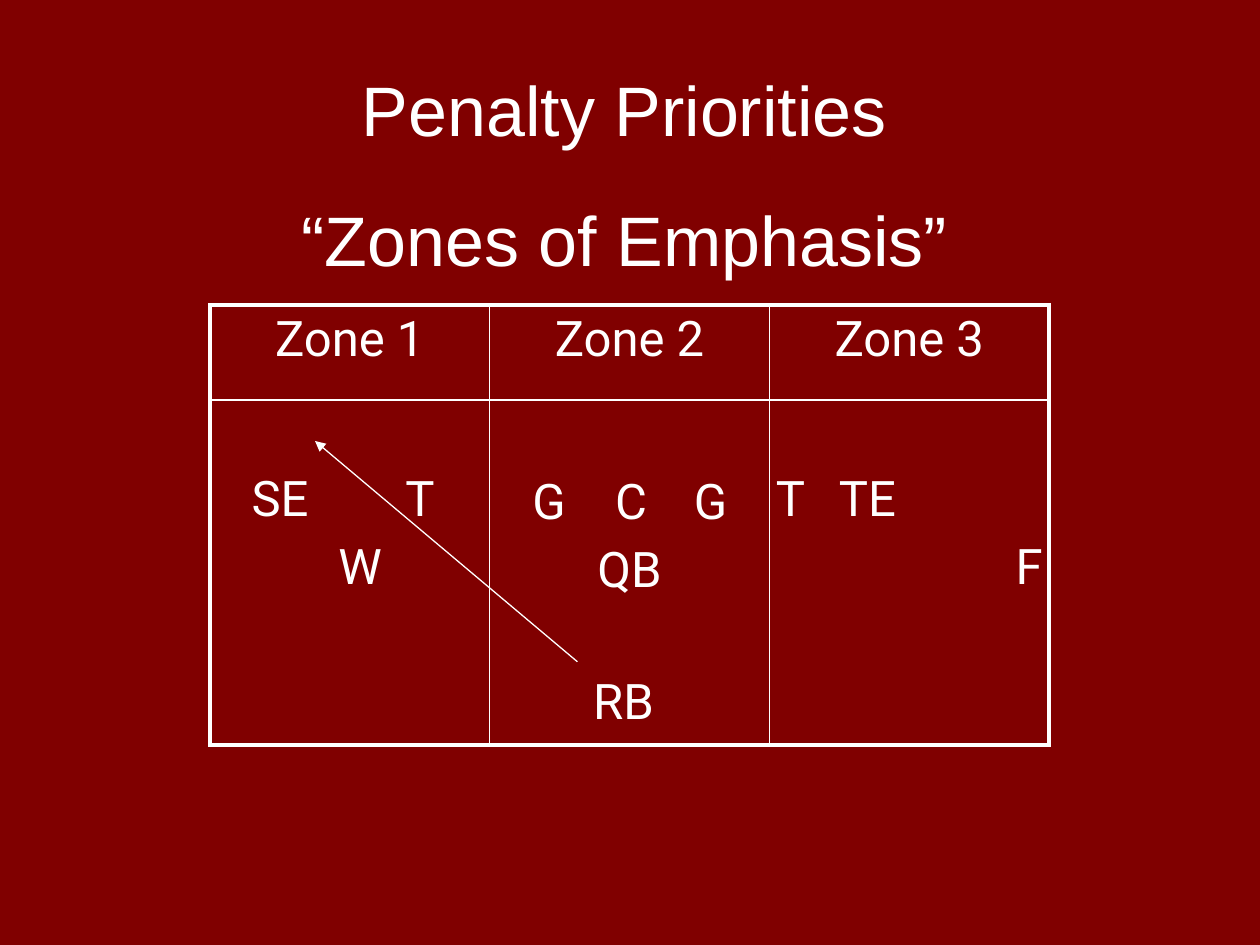
from lxml.etree import SubElement
from pptx import Presentation
from pptx.dml.color import RGBColor
from pptx.enum.shapes import MSO_CONNECTOR
from pptx.enum.text import PP_ALIGN
from pptx.oxml.ns import qn
from pptx.util import Cm, Pt

THEME = {
    "bg": RGBColor(0x80, 0, 0),
    "ink": RGBColor(0xFF, 0xFF, 0xFF),
    "title": {"name": "Arial", "size": Pt(40)},
    "body": {"name": "Roboto", "size": Pt(28)},
    "outer": 2.25,
    "inner": 1,
    "arrow": 0.75,
}
LEFT, CENTER, RIGHT = PP_ALIGN.LEFT, PP_ALIGN.CENTER, PP_ALIGN.RIGHT
INSET = 0.13

TITLE = [("Penalty Priorities", CENTER, 0, ()), ("“Zones of Emphasis”", CENTER, 26, ())]
ZONES = ["Zone 1", "Zone 2", "Zone 3"]
FORMATIONS = [
    (1.44, [("\tSE\tT", LEFT, 0, (0.71, 3.81)), ("\tW", LEFT, 6, (2.46,))]),
    (1.5, [("\tG\tC\tG", LEFT, 0, (0.73, 2.4, 3.99)),
           ("QB", CENTER, 6, ()), ("RB ", CENTER, 42.5, ())]),
    (1.44, [("T\tTE", LEFT, 0, (1.27,)), ("F", RIGHT, 6, ())]),
]
ROWS = [[(INSET, [(zone, CENTER, 0, ())]) for zone in ZONES], FORMATIONS]
ROW_HEIGHTS = [1.91, 6.96]
COL_WIDTH = 5.64
TABLE_LEFT, TABLE_TOP = 4.23, 6.15
RUN_START, RUN_END = (11.64, 13.34), (6.35, 8.89)


def write(tf, paragraphs, font):
    for i, (text, align, before, tabs) in enumerate(paragraphs):
        p = tf.paragraphs[0] if i == 0 else tf.add_paragraph()
        p.alignment = align
        if before:
            p.space_before = Pt(before)
        if tabs:
            tab_list = SubElement(p._p.get_or_add_pPr(), qn("a:tabLst"))
            for pos in tabs:
                SubElement(tab_list, qn("a:tab"), pos=str(Cm(pos)), algn="l")
        r = p.add_run()
        r.text = text
        for key, value in font.items():
            setattr(r.font, key, value)
        r.font.color.rgb = THEME["ink"]


def set_margins(target, top):
    margins = {"left": INSET, "right": INSET, "top": top, "bottom": INSET}
    for side, value in margins.items():
        setattr(target, f"margin_{side}", Cm(value))


def set_borders(cell, edges):
    tcPr = cell._tc.get_or_add_tcPr()
    for tag, is_outer in edges.items():
        width = THEME["outer" if is_outer else "inner"]
        ln = SubElement(tcPr, qn(f"a:{tag}"), w=str(Pt(width)))
        fill = SubElement(ln, qn("a:solidFill"))
        SubElement(fill, qn("a:srgbClr"), val=str(THEME["ink"]))


def add_title(s):
    tf = s.shapes.add_textbox(Cm(1.47), Cm(1.07), Cm(22.23), Cm(4.24)).text_frame
    tf.word_wrap = True
    set_margins(tf, 0.28)
    write(tf, TITLE, THEME["title"])


def add_zones(s):
    n_rows, n_cols = len(ROWS), len(ZONES)
    table = s.shapes.add_table(
        n_rows, n_cols, Cm(TABLE_LEFT), Cm(TABLE_TOP),
        Cm(COL_WIDTH * n_cols), Cm(sum(ROW_HEIGHTS))).table
    table.first_row = table.horz_banding = False
    for col in table.columns:
        col.width = Cm(COL_WIDTH)
    for i, row in enumerate(ROWS):
        table.rows[i].height = Cm(ROW_HEIGHTS[i])
        for j, (top, paragraphs) in enumerate(row):
            cell = table.cell(i, j)
            set_margins(cell, top)
            set_borders(cell, {"lnL": j == 0, "lnR": j == n_cols - 1,
                               "lnT": i == 0, "lnB": i == n_rows - 1})
            cell.fill.background()
            write(cell.text_frame, paragraphs, THEME["body"])


def add_run_arrow(s):
    ends = [Cm(v) for v in RUN_START + RUN_END]
    arrow = s.shapes.add_connector(MSO_CONNECTOR.STRAIGHT, *ends)
    arrow.line.color.rgb = THEME["ink"]
    arrow.line.width = Pt(THEME["arrow"])
    SubElement(arrow.line._get_or_add_ln(), qn("a:tailEnd"), type="triangle")
    SubElement(arrow._element.spPr, qn("a:effectLst"))


def main():
    prs = Presentation()
    prs.slide_width, prs.slide_height = Cm(25.4), Cm(19.05)
    s = prs.slides.add_slide(prs.slide_layouts[6])
    s.background.fill.solid()
    s.background.fill.fore_color.rgb = THEME["bg"]
    add_title(s)
    add_zones(s)
    add_run_arrow(s)
    prs.save("out.pptx")


if __name__ == "__main__":
    main()
